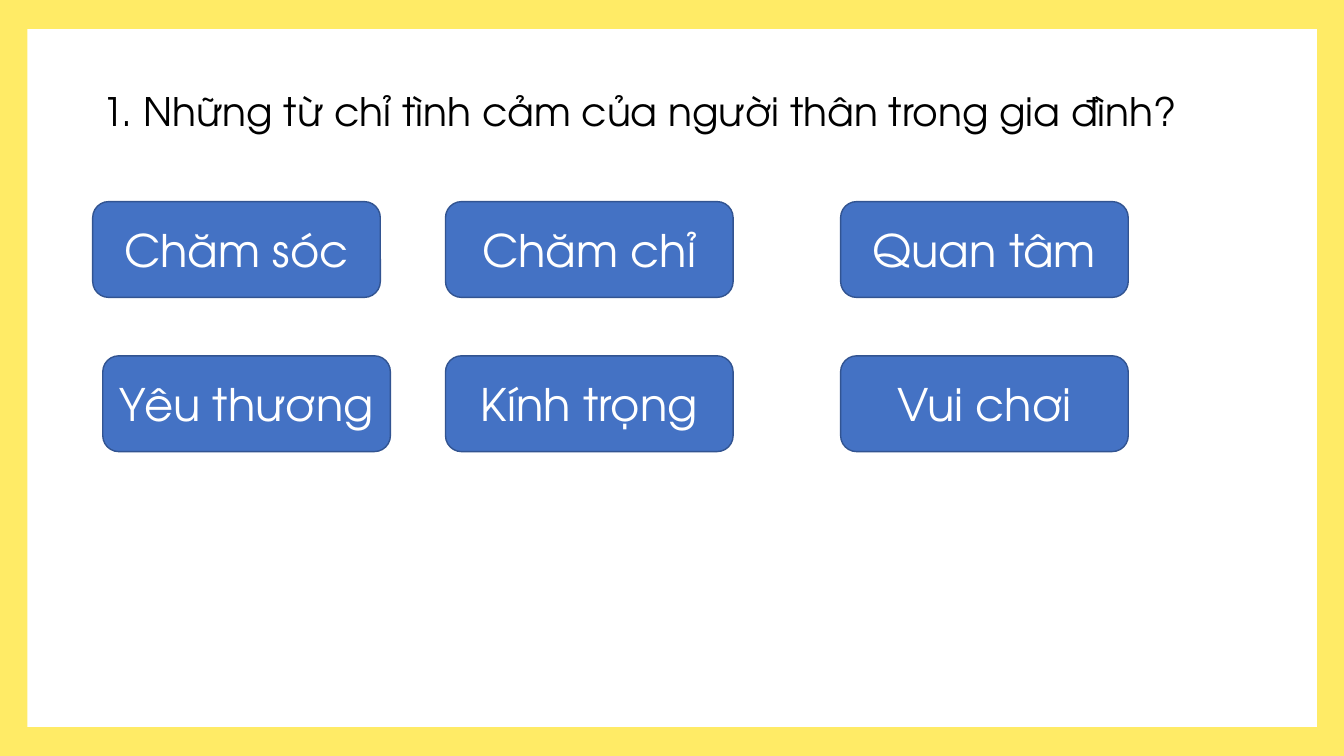
import pptx
import pptx.dml.color
import pptx.enum.shapes
import pptx.enum.text
import pptx.util

RGBColor = pptx.dml.color.RGBColor
Preset = pptx.enum.shapes.MSO_SHAPE
Align = pptx.enum.text.PP_ALIGN

YELLOW = RGBColor(0xFF, 0xEB, 0x66)
WHITE = RGBColor(0xFF, 0xFF, 0xFF)
BLACK = RGBColor(0, 0, 0)
BLUE = RGBColor(0x44, 0x72, 0xC4)
DARK_BLUE = RGBColor(0x32, 0x54, 0x91)
FONT = "TeX Gyre Adventor"


def write(frame, text, size, color, align=Align.LEFT, spacing=1.0):
    frame.word_wrap = True
    frame.vertical_anchor = pptx.enum.text.MSO_ANCHOR.MIDDLE
    paragraph = frame.paragraphs[0]
    paragraph.alignment = align
    paragraph.line_spacing = spacing
    run = paragraph.add_run()
    run.text = text
    run.font.name = FONT
    run.font.size = pptx.util.Pt(size)
    run.font.color.rgb = color


class QuizSlide:
    """Places elements by percentages of the slide's width and height."""

    def __init__(self, deck):
        self.width, self.height = deck.slide_width, deck.slide_height
        self.slide = deck.slides.add_slide(deck.slide_layouts[6])

    def area(self, left, top, width, height):
        return (int(self.width * left / 100), int(self.height * top / 100),
                int(self.width * width / 100), int(self.height * height / 100))

    def panel(self, area, fill, preset=Preset.RECTANGLE, line=None):
        panel = self.slide.shapes.add_shape(preset, *self.area(*area))
        panel.shadow.inherit = False
        panel.fill.solid()
        panel.fill.fore_color.rgb = fill
        if line is None:
            panel.line.fill.background()
        else:
            panel.line.color.rgb = line
            panel.line.width = pptx.util.Pt(1)
        return panel

    def question(self, area, text):
        question = self.slide.shapes.add_textbox(*self.area(*area))
        write(question.text_frame, text, size=28, color=BLACK, spacing=0.9)

    def answer(self, area, text):
        card = self.panel(area, BLUE, Preset.ROUNDED_RECTANGLE, DARK_BLUE)
        write(card.text_frame, text, size=32, color=WHITE, align=Align.CENTER)


def main():
    deck = pptx.Presentation()
    deck.slide_width = pptx.util.Inches(13.33)
    deck.slide_height = pptx.util.Inches(7.5)
    quiz = QuizSlide(deck)

    # Yellow frame around a white page
    quiz.panel((0, 0, 100, 100), YELLOW)
    quiz.panel((2.03, 3.87, 95.95, 92.27), WHITE)

    # Question
    quiz.question((6.9, 5.33, 86.27, 19.33),
                  "1. Những từ chỉ tình cảm của người thân trong gia đình?")

    # Answer cards; the second row starts slightly further right
    answer_rows = [
        (26.67, (6.9, 33.15, 62.55), ("Chăm sóc", "Chăm chỉ", "Quan tâm")),
        (47.07, (7.65, 33.15, 62.55), ("Yêu thương", "Kính trọng", "Vui chơi")),
    ]
    for top, lefts, answers in answer_rows:
        for left, answer in zip(lefts, answers):
            quiz.answer((left, top, 21.4, 12.67), answer)

    deck.save("out.pptx")


if __name__ == "__main__":
    main()
